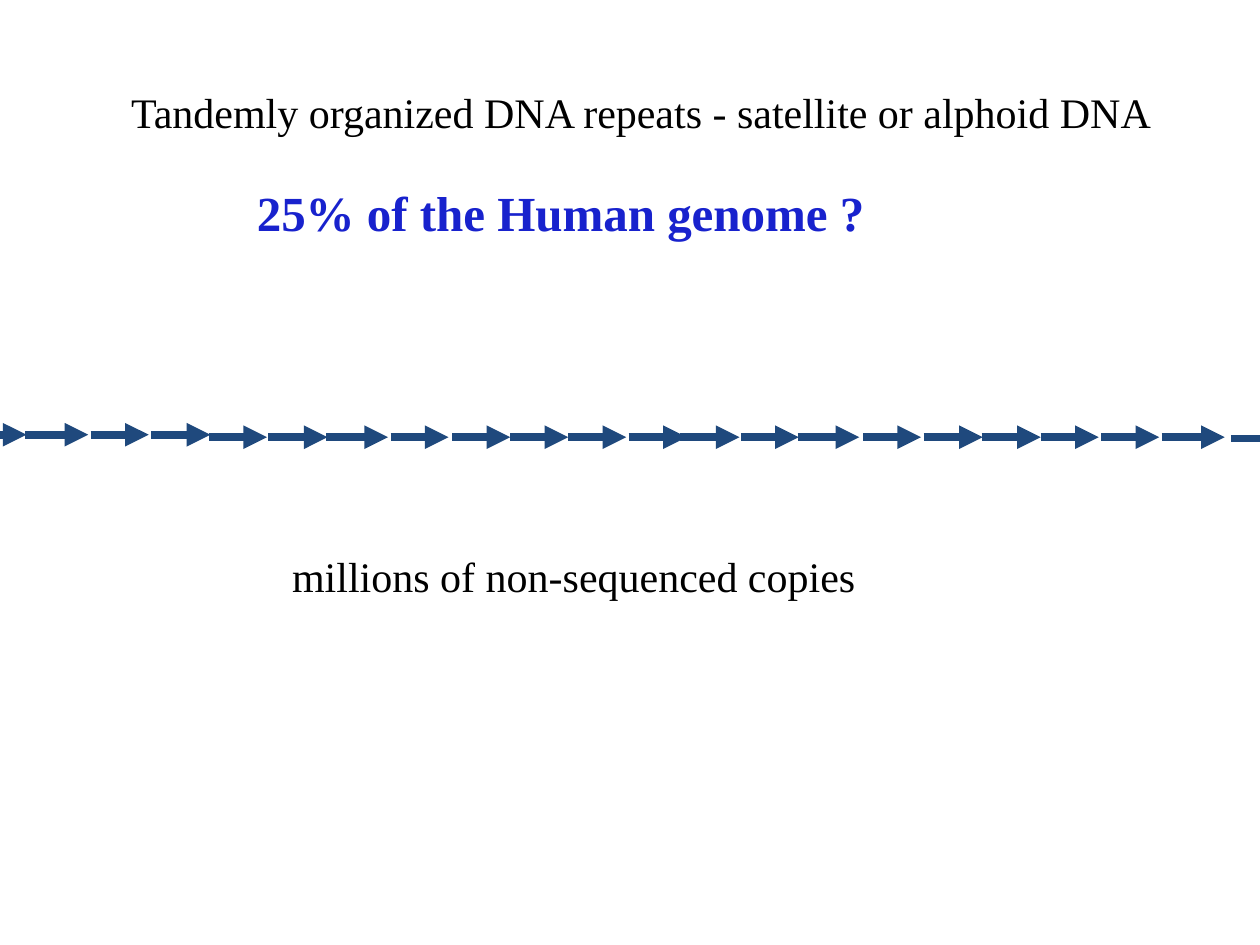
import dataclasses

import lxml.etree
import pptx
import pptx.dml.color
import pptx.enum.shapes
import pptx.enum.text
import pptx.oxml.ns
import pptx.util

PX = 9144
BLACK = pptx.dml.color.RGBColor(0x00, 0x00, 0x00)
BLUE = pptx.dml.color.RGBColor(0x18, 0x22, 0xCD)
NAVY = pptx.dml.color.RGBColor(0x1F, 0x49, 0x7D)
FRAME = {
    "word_wrap": False,
    "auto_size": pptx.enum.text.MSO_AUTO_SIZE.SHAPE_TO_FIT_TEXT,
    "vertical_anchor": pptx.enum.text.MSO_ANCHOR.TOP,
}


@dataclasses.dataclass
class Label:
    text: str
    left: int
    top: int
    width: int
    height: int
    size: int = 24
    color: pptx.dml.color.RGBColor = BLACK
    bold: bool = False


@dataclasses.dataclass
class Row:
    y: int
    spans: list[tuple[int, int]]


TITLE = Label("Tandemly organized DNA repeats - satellite or alphoid DNA", 94, 64, 834, 50)
SHARE = Label("25% of the Human genome ?", 194, 140, 503, 57, 28, BLUE, True)
COUNT = Label("millions of non-sequenced copies", 222, 432, 467, 50)
ROWS = [
    Row(345, [(-25, 21), (20, 70), (72, 118), (120, 167)]),
    Row(347, [
        (166, 212), (213, 260), (259, 308), (310, 356), (359, 405), (405, 451),
        (451, 497), (499, 545), (540, 587), (588, 634), (633, 682), (685, 731),
        (733, 780), (779, 826), (826, 872), (874, 920), (922, 972),
    ]),
    Row(348, [(977, 1023)]),
]


def style(item: object, values: dict) -> None:
    for name, value in values.items():
        setattr(item, name, value)


def write(shape: pptx.shapes.base.BaseShape, label: Label) -> None:
    style(shape, {
        name: getattr(label, name) * PX for name in ("left", "top", "width", "height")
    })
    frame = shape.text_frame
    style(frame, FRAME)
    para = frame.paragraphs[0]
    para.alignment = pptx.enum.text.PP_ALIGN.LEFT
    run = para.add_run()
    run.text = label.text
    style(run.font, {
        "name": "Times New Roman",
        "size": pptx.util.Pt(label.size),
        "bold": label.bold,
    })
    run.font.color.rgb = label.color


def arrow(slide: pptx.slide.Slide, start: int, end: int, y: int) -> None:
    line = slide.shapes.add_connector(
        pptx.enum.shapes.MSO_CONNECTOR.STRAIGHT, start * PX, y * PX, end * PX, y * PX
    )
    line.line.color.rgb = NAVY
    line.line.width = pptx.util.Pt(4.5)
    tail = lxml.etree.SubElement(line.line._get_or_add_ln(), pptx.oxml.ns.qn("a:tailEnd"))
    tail.set("type", "triangle")
    lxml.etree.SubElement(line._element.spPr, pptx.oxml.ns.qn("a:effectLst"))


def main() -> None:
    deck = pptx.Presentation()
    style(deck, {"slide_width": 1000 * PX, "slide_height": 750 * PX})
    slide = deck.slides.add_slide(deck.slide_layouts[5])
    write(slide.shapes.title, TITLE)
    for label in (SHARE, COUNT):
        write(slide.shapes.add_textbox(0, 0, 0, 0), label)
    for row in ROWS:
        for start, end in row.spans:
            arrow(slide, start, end, row.y)
    deck.save("out.pptx")


if __name__ == "__main__":
    main()
